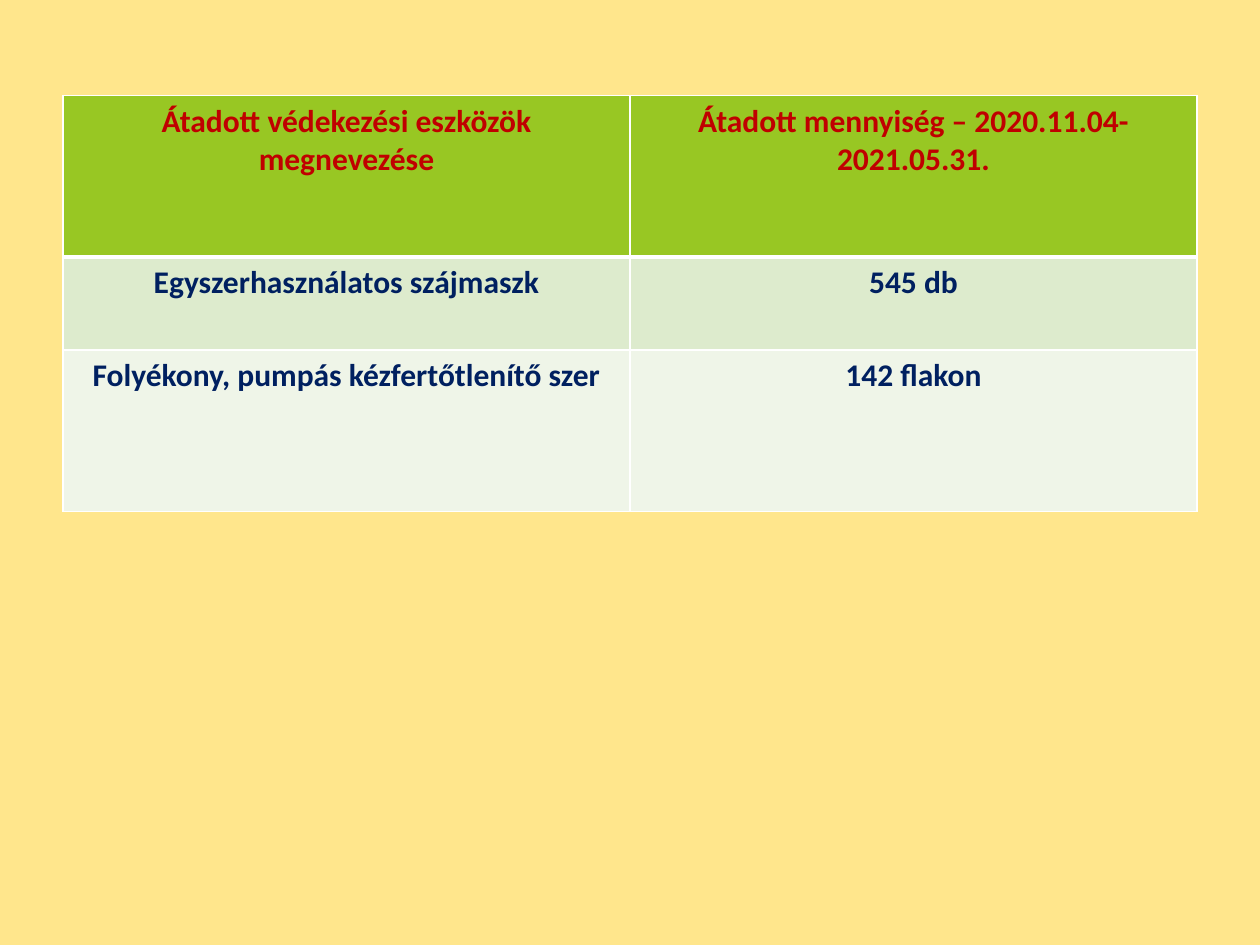
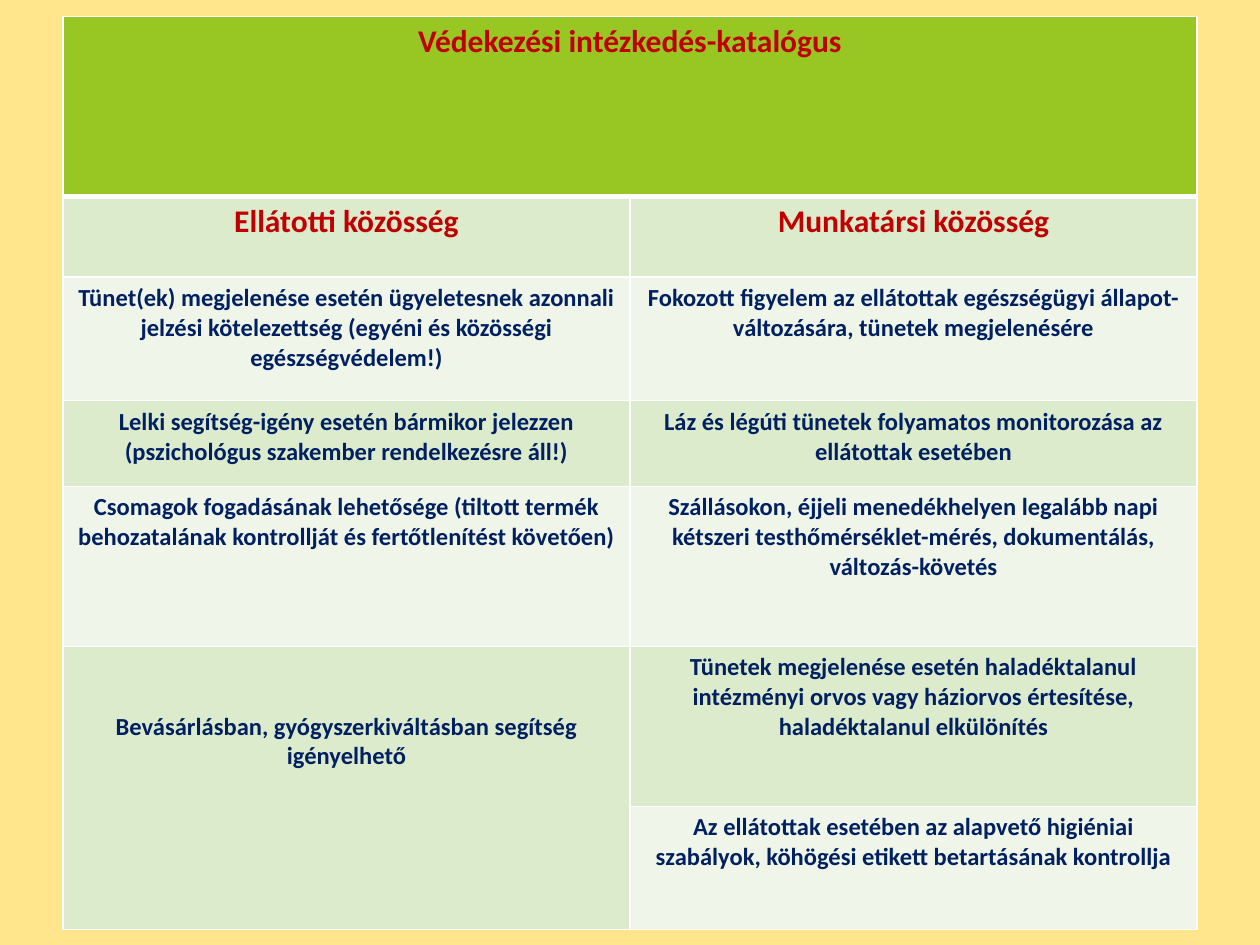
"""Build two slides with tables on protective equipment and measures."""
from lxml import etree
from pptx import Presentation
from pptx import util as u
from pptx.dml.color import RGBColor
from pptx.enum import text
from pptx.oxml import ns

BACKGROUND = "FFE68C"
HEADER_FILL = "98C723"
BAND_FILLS = ["EFF5E8", "DDEBCD"]
BORDER = "FFFFFF"
RED = "C00000"
NAVY = "002060"


def paint(fill, color):
    fill.solid()
    fill.fore_color.rgb = RGBColor.from_string(color)


def add_borders(cell, widths):
    properties = cell._tc.get_or_add_tcPr()
    for position, (side, width) in enumerate(zip("LRTB", widths)):
        line = etree.Element(ns.qn(f"a:ln{side}"), w=str(u.Pt(width)))
        solid = etree.SubElement(line, ns.qn("a:solidFill"))
        etree.SubElement(solid, ns.qn("a:srgbClr"), val=BORDER)
        properties.insert(position, line)


equipment = [
    ["Átadott védekezési eszközök megnevezése", "Átadott mennyiség – 2020.11.04-2021.05.31."],
    ["Egyszerhasználatos szájmaszk", "545 db"],
    ["Folyékony, pumpás kézfertőtlenítő szer", "142 flakon"],
]
measures = [
    ["Védekezési intézkedés-katalógus", ""],
    ["Ellátotti közösség", "Munkatársi közösség"],
    ["Tünet(ek) megjelenése esetén ügyeletesnek azonnali jelzési kötelezettség "
     "(egyéni és közösségi egészségvédelem!)",
     "Fokozott figyelem az ellátottak egészségügyi állapot-változására, tünetek megjelenésére"],
    ["Lelki segítség-igény esetén bármikor jelezzen (pszichológus szakember rendelkezésre áll!)",
     "Láz és légúti tünetek folyamatos monitorozása az ellátottak esetében"],
    ["Csomagok fogadásának lehetősége (tiltott termék behozatalának kontrollját "
     "és fertőtlenítést követően)",
     "Szállásokon, éjjeli menedékhelyen legalább napi kétszeri testhőmérséklet-mérés, "
     "dokumentálás, változás-követés"],
    ["Bevásárlásban, gyógyszerkiváltásban segítség igényelhető",
     "Tünetek megjelenése esetén haladéktalanul intézményi orvos vagy háziorvos értesítése, "
     "haladéktalanul elkülönítés"],
    ["", "Az ellátottak esetében az alapvető higiéniai szabályok, köhögési etikett "
     "betartásának kontrollja"],
]
slides = [
    {"rows": equipment, "top": 0.76, "heights": [1.28, 0.74, 1.28],
     "red_rows": 1, "body_size": 18, "merges": []},
    {"rows": measures, "top": 0.13, "heights": [1.43, 0.64, 0.98, 0.68, 1.27, 1.27, 0.98],
     "red_rows": 2, "body_size": 14, "merges": [((0, 0), (0, 1)), ((5, 0), (6, 0))]},
]

deck = Presentation()
deck.slide_width = u.Inches(10)
deck.slide_height = u.Inches(7.5)

for content in slides:
    page = deck.slides.add_slide(deck.slide_layouts[6])
    paint(page.background.fill, BACKGROUND)
    heights = content["heights"]
    table = page.shapes.add_table(
        len(heights), 2, u.Inches(0.5), u.Inches(content["top"]),
        u.Inches(9), u.Inches(sum(heights))).table
    table.first_row = False
    table.horz_banding = False

    for row_index, (height, words) in enumerate(zip(heights, content["rows"])):
        table.rows[row_index].height = u.Inches(height)
        is_heading = row_index < content["red_rows"]
        for column_index, wording in enumerate(words):
            cell = table.cell(row_index, column_index)
            paint(cell.fill, BAND_FILLS[row_index % 2] if row_index else HEADER_FILL)
            add_borders(cell, [1, 1, 3 if row_index == 1 else 1, 1 if row_index else 3])
            if not wording:
                continue
            para = cell.text_frame.paragraphs[0]
            para.alignment = text.PP_ALIGN.CENTER
            span = para.add_run()
            span.text = wording
            span.font.name = "Calibri"
            span.font.size = u.Pt(18 if is_heading else content["body_size"])
            span.font.bold = True
            span.font.color.rgb = RGBColor.from_string(RED if is_heading else NAVY)

    for first, last in content["merges"]:
        table.cell(*first).merge(table.cell(*last))
        if first[0]:
            table.cell(*first).margin_top = u.Inches(0.52)

deck.save("out.pptx")
